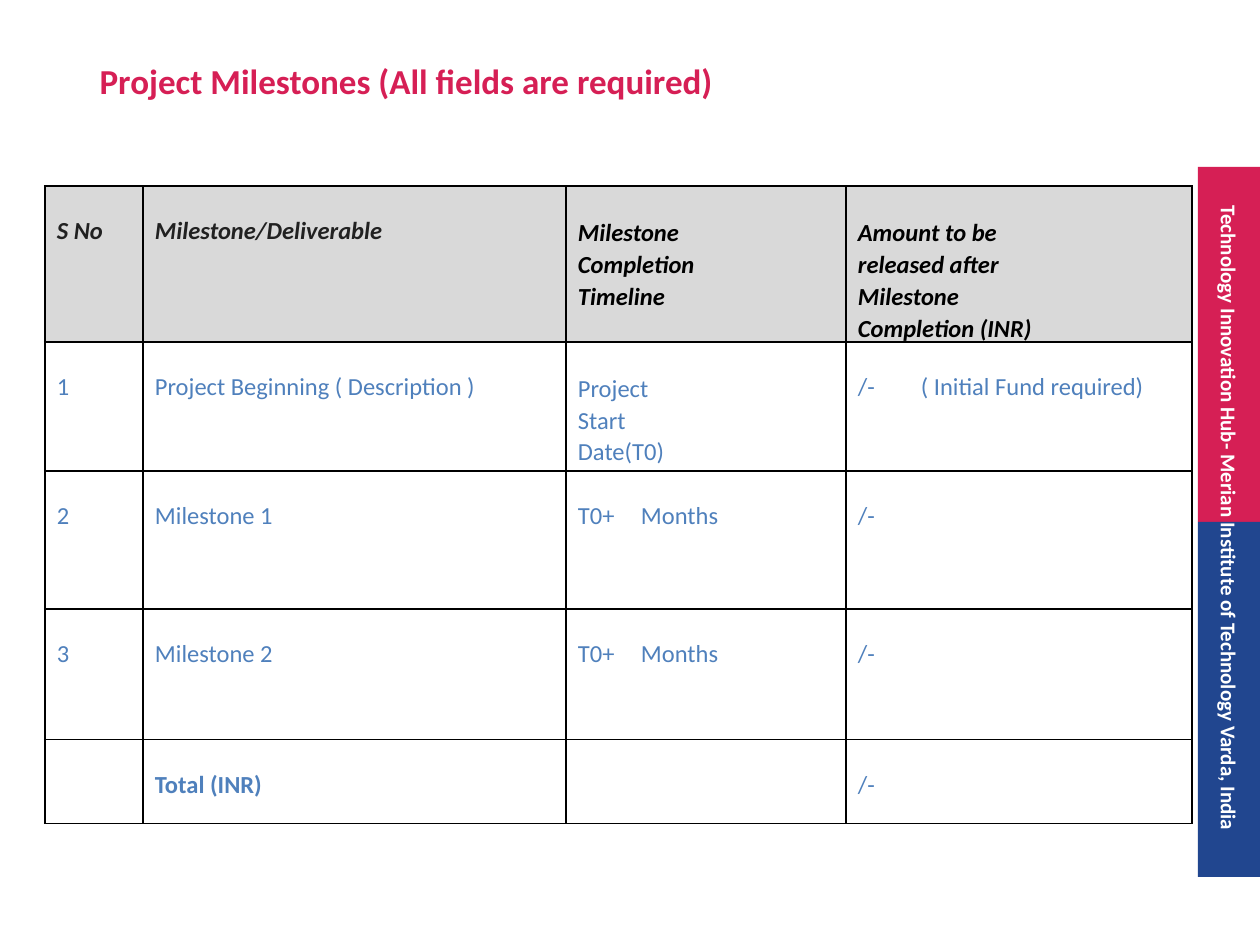
from dataclasses import dataclass

from lxml import etree
from pptx import Presentation
from pptx.dml.color import RGBColor
from pptx.enum.shapes import MSO_SHAPE
from pptx.enum.text import MSO_ANCHOR, PP_ALIGN
from pptx.oxml.ns import qn
from pptx.util import Emu, Pt

RECTANGLE = MSO_SHAPE.RECTANGLE
MIDDLE = MSO_ANCHOR.MIDDLE
LEFT, CENTER = PP_ALIGN.LEFT, PP_ALIGN.CENTER

PX_PER_INCH = 126
FONT = "Calibri"
COLORS = {
    "crimson": "D61F55", "navy": "21468F", "white": "FFFFFF", "black": "000000",
    "charcoal": "212121", "blue": "4F80BC", "grey": "D9D9D9",
}
COLUMN_WIDTHS = [98, 423, 280, 346]
ROW_HEIGHTS = [140, 129, 138, 131, 84]
BORDERS = {"a:lnL": 1.5, "a:lnR": 1.5, "a:lnT": 1, "a:lnB": 1}
CELL_LEFT, CELL_TOP = 12, 30


@dataclass
class Bar:
    top: int
    color: str


@dataclass
class CellText:
    text: str
    color: str = "blue"
    bold: bool = False
    italic: bool = False
    right_inset: int = 0
    line_spacing: float = 1.0


def px(value: int) -> Emu:
    return Emu(round(value * 914400 / PX_PER_INCH))


def rgb(name: str) -> RGBColor:
    return RGBColor.from_string(COLORS[name])


def header(text: str, color: str = "black", right_inset: int = 0,
           line_spacing: float = 1.07) -> CellText:
    return CellText(text, color, True, True, right_inset, line_spacing)


BARS = [Bar(167, "crimson"), Bar(522, "navy")]
ROWS = [
    [header("S No", "charcoal", line_spacing=1.0),
     header("Milestone/Deliverable", "charcoal", line_spacing=1.0),
     header("Milestone Completion Timeline", right_inset=140),
     header("Amount to be released after Milestone Completion (INR)", right_inset=134)],
    [CellText("1"), CellText("Project Beginning ( Description )"),
     CellText("Project Start Date(T0)", right_inset=160, line_spacing=1.07),
     CellText("/-\t( Initial Fund required)")],
    [CellText("2"), CellText("Milestone 1"), CellText("T0+\tMonths"), CellText("/-")],
    [CellText("3"), CellText("Milestone 2"), CellText("T0+\tMonths"), CellText("/-")],
    [CellText(""), CellText("Total (INR)", bold=True), CellText(""), CellText("/-")],
]


def format_paragraph(paragraph, size: int, color: str, bold: bool = True,
                     italic: bool = False, alignment=LEFT) -> None:
    paragraph.alignment = alignment
    font = paragraph.font
    font.name, font.size, font.bold, font.italic = FONT, Pt(size), bold, italic
    font.color.rgb = rgb(color)


def add_bar(slide, bar: Bar) -> None:
    shape = slide.shapes.add_shape(RECTANGLE, px(1198), px(bar.top), px(62), px(355))
    shape.shadow.inherit = False
    shape.fill.solid()
    shape.fill.fore_color.rgb = rgb(bar.color)
    shape.line.fill.background()


def add_side_label(slide, text: str) -> None:
    label = slide.shapes.add_textbox(px(878), px(499), px(702), px(38))
    label.rotation = 90
    label.text_frame.word_wrap = True
    label.text_frame.text = text
    format_paragraph(label.text_frame.paragraphs[0], 12, "white", alignment=CENTER)


def set_title(slide, text: str) -> None:
    title = slide.shapes.title
    title.left, title.top, title.width, title.height = px(87), px(50), px(1086), px(67)
    title.text_frame.text = text
    title.text_frame.vertical_anchor = MIDDLE
    paragraph = title.text_frame.paragraphs[0]
    paragraph.line_spacing = 0.9
    format_paragraph(paragraph, 20, "crimson")


def set_borders(cell) -> None:
    properties = cell._tc.get_or_add_tcPr()
    for index, (tag, width) in enumerate(BORDERS.items()):
        line = etree.Element(qn(tag), w=str(Pt(width)))
        fill = etree.SubElement(line, qn("a:solidFill"))
        etree.SubElement(fill, qn("a:srgbClr"), val=COLORS["black"])
        properties.insert(index, line)


def fill_cell(cell, content: CellText, shaded: bool) -> None:
    cell.margin_left, cell.margin_top = px(CELL_LEFT), px(CELL_TOP)
    cell.margin_right, cell.margin_bottom = px(content.right_inset), 0
    cell.text = content.text
    paragraph = cell.text_frame.paragraphs[0]
    paragraph.line_spacing = content.line_spacing
    format_paragraph(paragraph, 14, content.color, content.bold, content.italic)
    if shaded:
        cell.fill.solid()
        cell.fill.fore_color.rgb = rgb("grey")
    else:
        cell.fill.background()
    set_borders(cell)


def add_milestone_table(slide) -> None:
    frame = slide.shapes.add_table(
        len(ROWS), len(COLUMN_WIDTHS), px(45), px(186),
        px(sum(COLUMN_WIDTHS)), px(sum(ROW_HEIGHTS)))
    table = frame.table
    table.first_row = table.horz_banding = False
    for column, width in zip(table.columns, COLUMN_WIDTHS):
        column.width = px(width)
    for row, height in zip(table.rows, ROW_HEIGHTS):
        row.height = px(height)
    for row_index, contents in enumerate(ROWS):
        for column_index, content in enumerate(contents):
            fill_cell(table.cell(row_index, column_index), content, row_index == 0)


def main() -> None:
    presentation = Presentation()
    presentation.slide_width, presentation.slide_height = px(1260), px(945)
    slide = presentation.slides.add_slide(presentation.slide_layouts[5])

    # Side band
    for bar in BARS:
        add_bar(slide, bar)
    add_side_label(
        slide, "Technology Innovation Hub- Merian Institute of Technology Varda, India")

    # Title and milestones
    set_title(slide, "Project Milestones (All fields are required)")
    add_milestone_table(slide)

    presentation.save("out.pptx")


if __name__ == "__main__":
    main()
